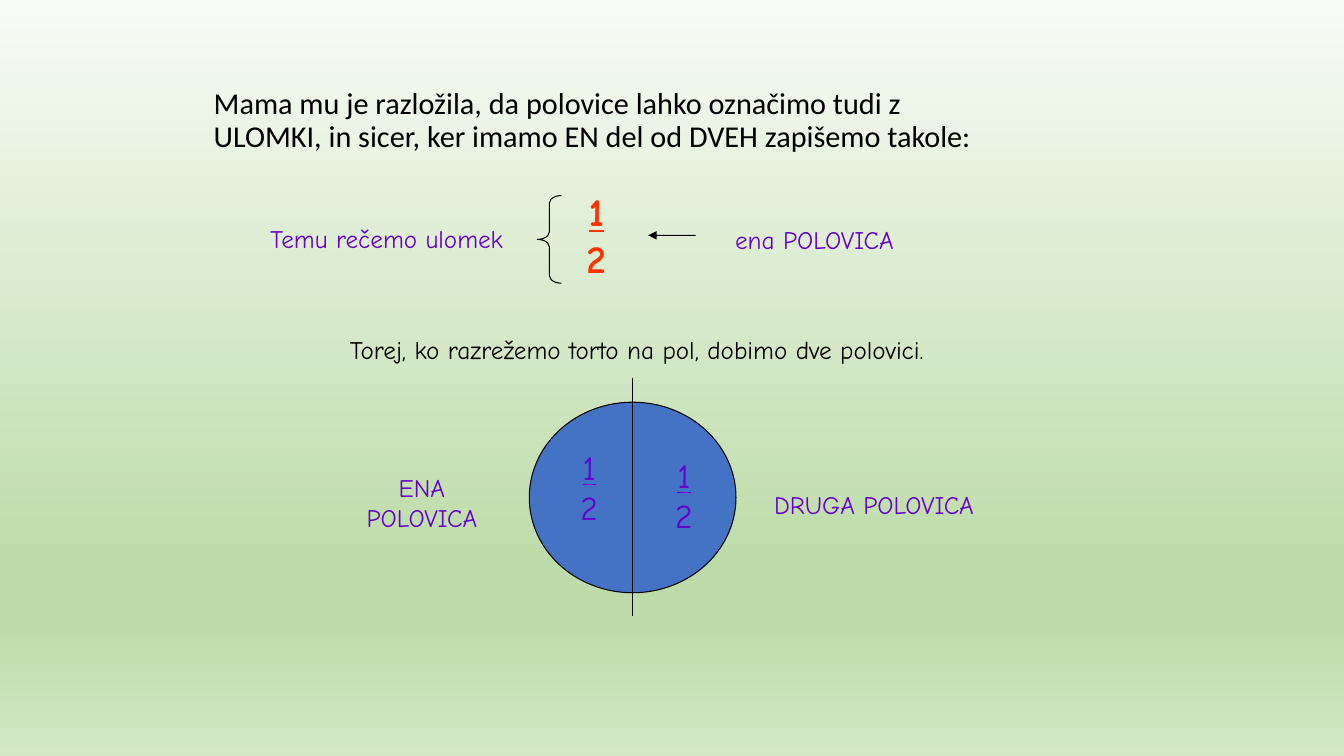
from copy import deepcopy
from dataclasses import dataclass

from lxml import etree
from pptx import Presentation
from pptx import util as u
from pptx.dml.color import RGBColor
from pptx.enum import shapes, text
from pptx.oxml.ns import qn


@dataclass(frozen=True)
class Theme:
    """Colours, fonts and type sizes of the slide."""
    ink: str = "000000"
    purple: str = "6600CC"
    red: str = "FF3300"
    cake: str = "4472C4"
    background: tuple = ((0, "F8FBF6"), (0.74, "BEDCAA"), (0.83, "BEDCAA"), (1, "D4E8C6"))
    title_font: str = "Calibri"
    body_font: str = "Comic Neue"
    title_size: float = 21.6
    label_size: float = 18
    fraction_size: float = 24
    main_fraction_size: float = 28
    line_width: float = 0.75


class SlideBuilder:
    """Draws elements on one slide, with lengths in percent of its size."""

    def __init__(self, presentation, theme):
        self.theme = theme
        self.width, self.height = presentation.slide_width, presentation.slide_height
        self.slide = presentation.slides.add_slide(presentation.slide_layouts[5])
        self.shapes = self.slide.shapes

    def place(self, left, top, width, height):
        """Turn percentages into slide lengths."""
        return [round(share * size / 100) for share, size in
                zip((left, top, width, height), (self.width, self.height) * 2)]

    def assign(self, target, values):
        """Set attributes from a dict."""
        for name, value in values.items():
            setattr(target, name, value)

    def style_run(self, run, color, size, name, **extra):
        """Format the font of one run."""
        self.assign(run.font, {"size": u.Pt(size), "name": name, **extra})
        run.font.color.rgb = RGBColor.from_string(color)

    def background(self):
        """Fill the background with the vertical gradient."""
        fill = self.slide.background.fill
        fill.gradient()
        fill.gradient_angle = 270
        stop_list = next(self.slide.element.iter(qn("a:gsLst")))
        while len(stop_list) < len(self.theme.background):
            stop_list.append(deepcopy(stop_list[0]))
        for stop, (position, color) in zip(fill.gradient_stops, self.theme.background):
            stop.position = position
            stop.color.rgb = RGBColor.from_string(color)

    def title(self, words, box):
        """Move, fill and format the title placeholder."""
        shape = self.shapes.title
        self.assign(shape, dict(zip(("left", "top", "width", "height"), self.place(*box))))
        self.assign(shape.text_frame, {
            "word_wrap": True, "auto_size": text.MSO_AUTO_SIZE.NONE,
            "vertical_anchor": text.MSO_ANCHOR.TOP, "margin_top": u.Inches(0.12)})
        paragraph = shape.text_frame.paragraphs[0]
        self.assign(paragraph, {"alignment": text.PP_ALIGN.LEFT, "line_spacing": 0.9})
        run = paragraph.add_run()
        run.text = words
        self.style_run(run, self.theme.ink, self.theme.title_size, self.theme.title_font)

    def text_box(self, box):
        """Add an empty centred text box and return it with its paragraph."""
        shape = self.shapes.add_textbox(*self.place(*box))
        self.assign(shape.text_frame, {
            "word_wrap": True, "vertical_anchor": text.MSO_ANCHOR.BOTTOM})
        paragraph = shape.text_frame.paragraphs[0]
        paragraph.alignment = text.PP_ALIGN.CENTER
        return shape, paragraph

    def label(self, words, box, color):
        """Add a one-style label."""
        shape, paragraph = self.text_box(box)
        run = paragraph.add_run()
        run.text = words
        self.style_run(run, color, self.theme.label_size, self.theme.body_font)
        return shape

    def half(self, left, top, color, size, bold=False):
        """Add the fraction one half, its numerator underlined."""
        paragraph = self.text_box((left, top, 5.33, 10.93))[1]
        for digit, underline in (("1", True), ("2", False)):
            if not underline:
                paragraph.add_line_break()
            run = paragraph.add_run()
            run.text = digit
            self.style_run(run, color, size, self.theme.body_font,
                           bold=bold, underline=underline)

    def outline(self, line):
        """Give a line the common colour and width."""
        line.color.rgb = RGBColor.from_string(self.theme.ink)
        line.width = u.Pt(self.theme.line_width)

    def shape(self, kind, box, fill=None, adjustments=()):
        """Add an outlined preset shape."""
        shape = self.shapes.add_shape(kind, *self.place(*box))
        shape.shadow.inherit = False
        if fill:
            shape.fill.solid()
            shape.fill.fore_color.rgb = RGBColor.from_string(fill)
        else:
            shape.fill.background()
        self.outline(shape.line)
        for index, value in enumerate(adjustments):
            shape.adjustments[index] = value

    def line(self, start, end, source=None, side=1, arrow=False):
        """Add a straight line, joined to a source shape if one is given."""
        connector = self.shapes.add_connector(
            shapes.MSO_CONNECTOR.STRAIGHT, *self.place(*start, *end))
        self.outline(connector.line)
        if source is not None:
            connector.begin_connect(source, side)
        if arrow:
            etree.SubElement(connector.line._get_or_add_ln(), qn("a:tailEnd"), type="triangle")
        etree.SubElement(connector.element.spPr, qn("a:effectLst"))


def main():
    """Build and save the slide about halves."""
    presentation = Presentation()
    presentation.slide_width, presentation.slide_height = u.Inches(40 / 3), u.Inches(7.5)
    theme = Theme()
    builder = SlideBuilder(presentation, theme)
    builder.background()
    builder.title("Mama mu je razložila, da polovice lahko označimo tudi z ULOMKI, "
                  "in sicer, ker imamo EN del od DVEH zapišemo takole:",
                  (15.15, 10.13, 58.5, 25.2))

    builder.label("Temu rečemo ulomek", (15.75, 26.93, 26.03, 7.33), theme.purple)
    half_name = builder.label("ena POLOVICA", (51.75, 28, 17.7, 6.27), theme.purple)
    builder.label("Torej, ko razrežemo torto na pol, dobimo dve polovici.",
                  (21.68, 41.6, 51.38, 7.33), theme.ink)

    builder.shape(shapes.MSO_SHAPE.OVAL, (39.38, 53.2, 15.38, 25.2), theme.cake)
    builder.line((47.03, 50), (47.03, 81.47))
    builder.line((51.75, 31.13), (48.23, 31.13), source=half_name, arrow=True)

    builder.label("ENA POLOVICA", (25.2, 59.47, 12.38, 11.6), theme.purple)
    builder.label("DRUGA POLOVICA", (56.48, 62.53, 17.1, 6.8), theme.purple)
    for left, top in ((48.23, 60.53), (41.18, 59.47)):
        builder.half(left, top, theme.purple, theme.fraction_size)
    builder.half(41.7, 26.93, theme.red, theme.main_fraction_size, bold=True)
    builder.shape(shapes.MSO_SHAPE.LEFT_BRACE, (39.98, 25.87, 1.8, 11.6),
                  adjustments=(0.31, 0.5))
    presentation.save("out.pptx")


if __name__ == "__main__":
    main()
